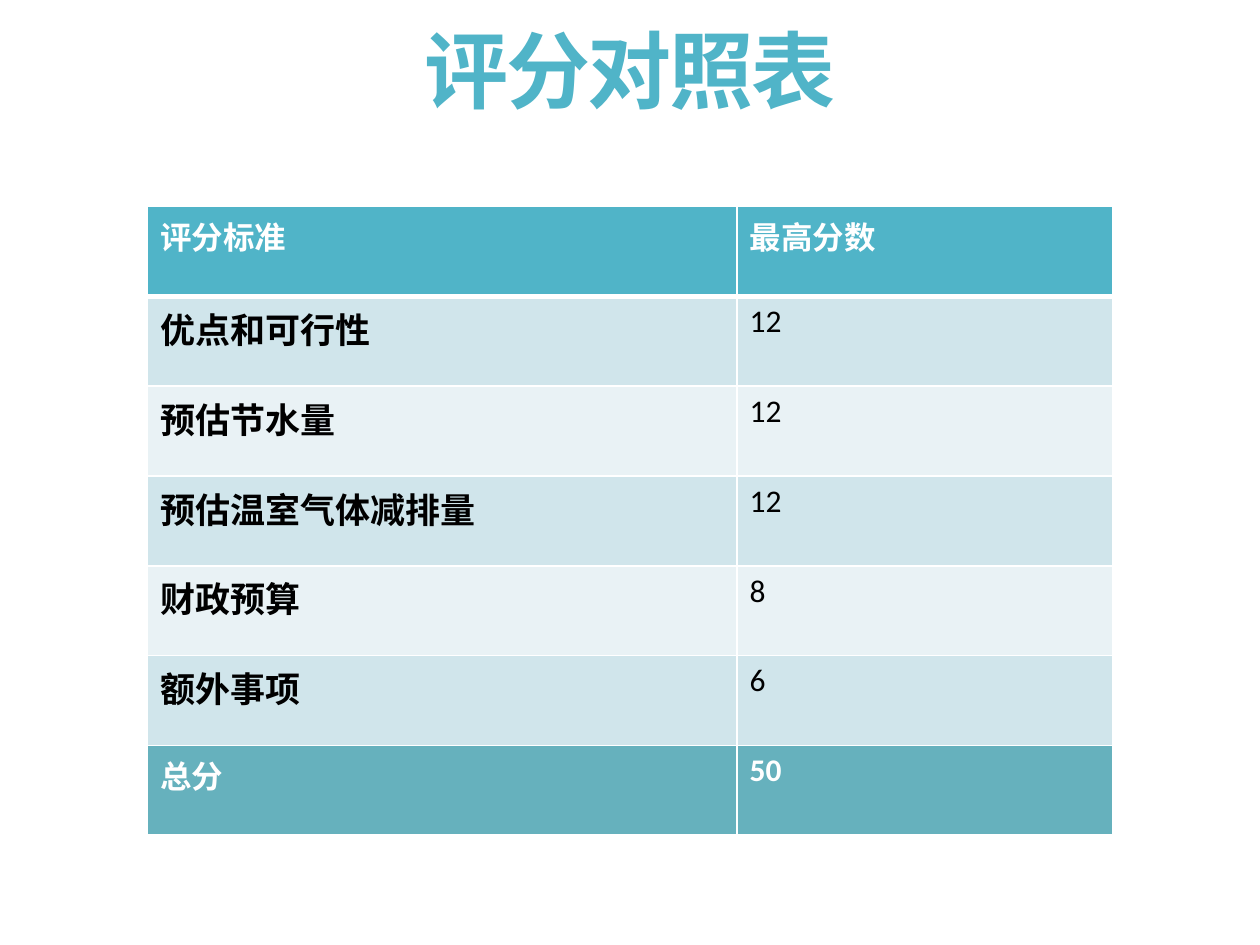
"""Build the scoring table slide."""
import pptx
import pptx.dml.color
import pptx.enum.text
import pptx.oxml
import pptx.oxml.ns
import pptx.util

TITLE = "评分对照表"
ROWS = [
    ("评分标准", "最高分数"),
    ("优点和可行性", "12"),
    ("预估节水量", "12"),
    ("预估温室气体减排量", "12"),
    ("财政预算", "8"),
    ("额外事项", "6"),
    ("总分", "50"),
]
COLORS = {"accent": "50B4C8", "odd": "D0E5EB", "even": "E9F2F5",
          "total": "66B1BD", "white": "FFFFFF", "black": "000000"}
FONT = "Calibri"
COL_WIDTHS = (4.68, 2.98)
TABLE_LEFT, TABLE_TOP, TABLE_HEIGHT = 1.17, 1.64, 4.99
Inches = pptx.util.Inches


def rgb(name):
    return pptx.dml.color.RGBColor.from_string(COLORS[name])


def style(p, size, color, bold):
    p.font.name, p.font.size, p.font.bold = FONT, pptx.util.Pt(size), bold
    p.font.color.rgb = rgb(color)


def add_border(cell, side, width):
    cell._tc.get_or_add_tcPr().append(pptx.oxml.parse_xml(
        f'<a:ln{side} {pptx.oxml.ns.nsdecls("a")} w="{pptx.util.Pt(width)}">'
        f'<a:solidFill><a:srgbClr val="{COLORS["white"]}"/></a:solidFill></a:ln{side}>'))


def add_title(s):
    title = s.shapes.title
    title.left, title.top, title.width, title.height = map(Inches, (0.58, 0.13, 8.84, 0.93))
    tf = title.text_frame
    tf.text = TITLE
    tf.vertical_anchor = pptx.enum.text.MSO_ANCHOR.MIDDLE
    p = tf.paragraphs[0]
    p.alignment = pptx.enum.text.PP_ALIGN.CENTER
    p.line_spacing = 0.9
    style(p, 48, "accent", True)
    p.runs[0].font._element.set("spc", "-120")


def add_scores(s):
    table = s.shapes.add_table(
        len(ROWS), len(COL_WIDTHS), Inches(TABLE_LEFT), Inches(TABLE_TOP),
        Inches(sum(COL_WIDTHS)), Inches(TABLE_HEIGHT)).table
    for column, width in zip(table.columns, COL_WIDTHS):
        column.width = Inches(width)
    last = len(ROWS) - 1
    for i, row in enumerate(ROWS):
        edge = i in (0, last)
        fill = {0: "accent", last: "total"}.get(i, "odd" if i % 2 else "even")
        for j, text in enumerate(row):
            cell = table.cell(i, j)
            cell.text = text
            style(cell.text_frame.paragraphs[0], 20 if j == 0 and not edge else 18,
                  "white" if edge else "black", edge or j == 0)
            for side in "LRTB":
                under_header = (i, side) in ((0, "B"), (1, "T"))
                add_border(cell, side, 3 if under_header else 1)
            cell.fill.solid()
            cell.fill.fore_color.rgb = rgb(fill)


def main():
    prs = pptx.Presentation()
    prs.slide_width, prs.slide_height = Inches(10), Inches(7.5)
    s = prs.slides.add_slide(prs.slide_layouts[5])
    add_title(s)
    add_scores(s)
    prs.save("out.pptx")


if __name__ == "__main__":
    main()
